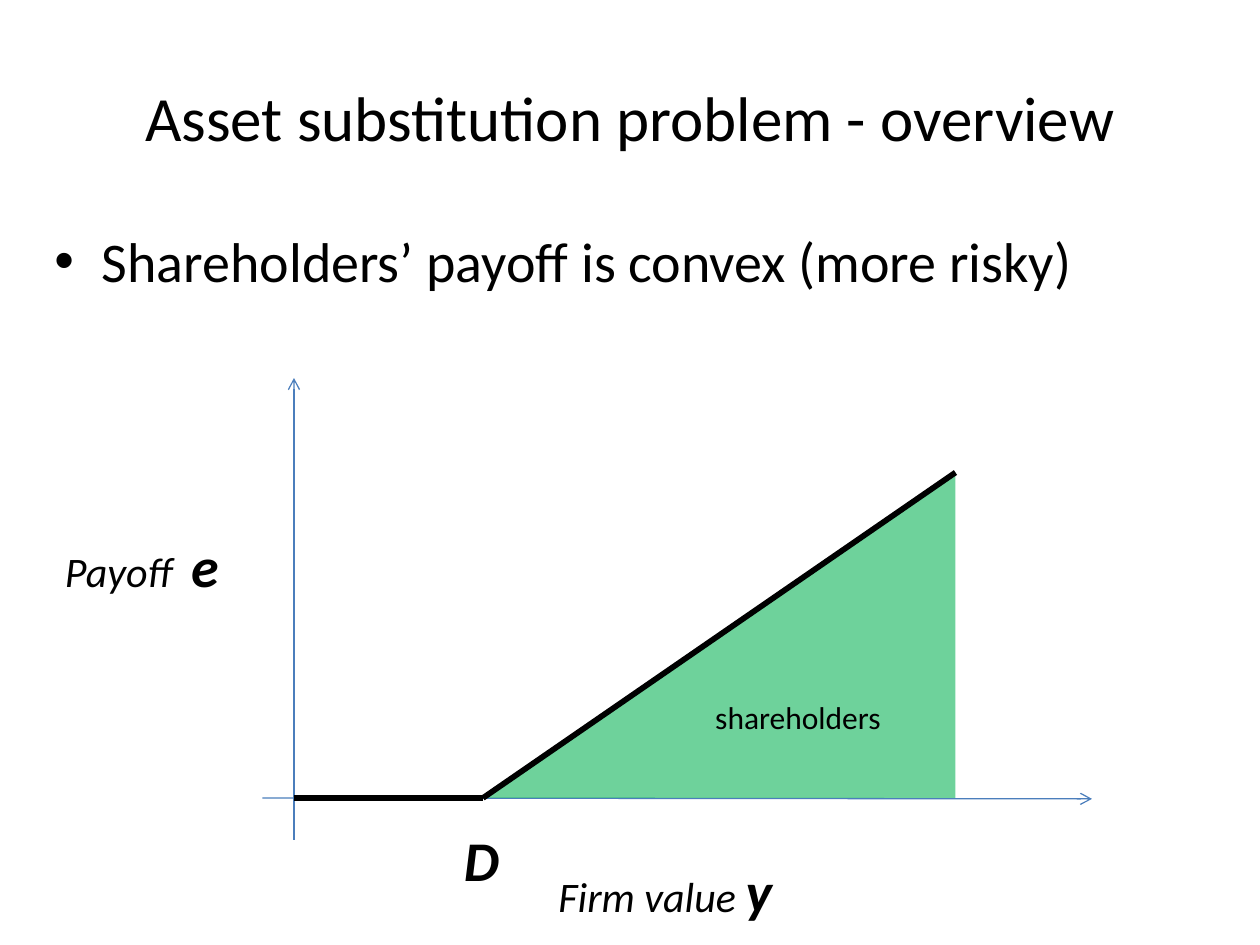
import pptx
import pptx.util
import pptx.dml.color
import pptx.enum.shapes
import pptx.enum.text
import pptx.oxml.ns
from lxml import etree

Pt = pptx.util.Pt
SHAPES = pptx.enum.shapes.MSO_SHAPE
ALIGN = pptx.enum.text.PP_ALIGN
ANCHOR = pptx.enum.text.MSO_ANCHOR
qn = pptx.oxml.ns.qn

FONT = "Calibri"
COLOURS = {"text": "000000", "axis": "4B7EBC", "payoff": "000000", "equity": "00B050"}


def rgb(name):
    return pptx.dml.color.RGBColor.from_string(COLOURS[name])


def write(frame, *spans, align=ALIGN.LEFT, anchor=ANCHOR.TOP, italic=False):
    """Fill a frame with one paragraph of (text, size, bold) spans."""
    frame.word_wrap = True
    frame.vertical_anchor = anchor
    para = frame.paragraphs[0]
    para.alignment = align
    for text, size, bold in spans:
        span = para.add_run()
        span.text = text
        span.font.name = FONT
        span.font.size = Pt(size)
        span.font.bold = bold
        span.font.italic = italic
        span.font.color.rgb = rgb("text")
    return para


def add_text(page, left, top, width, height, *spans, **style):
    box = page.shapes.add_textbox(Pt(left), Pt(top), Pt(width), Pt(height))
    return write(box.text_frame, *spans, **style)


def add_line(page, start, end, colour, weight, arrow=False):
    line = page.shapes.add_connector(
        pptx.enum.shapes.MSO_CONNECTOR.STRAIGHT, *map(Pt, start + end))
    line.line.color.rgb = rgb(colour)
    line.line.width = Pt(weight)
    if arrow:
        etree.SubElement(line.line._get_or_add_ln(), qn("a:tailEnd"), type="arrow")
    etree.SubElement(line._element.spPr, qn("a:effectLst"))


def add_title(page, left, top, width, height):
    add_text(page, left, top, width, height,
             ("Asset substitution problem - overview", 36, False),
             align=ALIGN.CENTER, anchor=ANCHOR.MIDDLE)


def add_bullet(page, left, top, width, height):
    para = add_text(page, left, top, width, height,
                    ("Shareholders’ payoff is convex (more risky)", 32, False))
    para.space_before = Pt(6.4)
    props = para._p.get_or_add_pPr()
    props.set("marL", str(Pt(27)))
    props.set("indent", str(-Pt(27)))
    etree.SubElement(props, qn("a:buFont"), typeface="Arial")
    etree.SubElement(props, qn("a:buChar"), char="•")


def add_equity_area(page, left, top, width, height):
    """Translucent triangle that rises to the right."""
    area = page.shapes.add_shape(
        SHAPES.RIGHT_TRIANGLE, Pt(left), Pt(top), Pt(width), Pt(height))
    area.shadow.inherit = False
    area._element.spPr.xfrm.set("flipH", "1")
    area.fill.solid()
    area.fill.fore_color.rgb = rgb("equity")
    colour = area._element.spPr.find(qn("a:solidFill"))[0]
    etree.SubElement(colour, qn("a:alpha"), val="57000")
    area.line.fill.background()
    write(area.text_frame, ("shareholders", 18, False),
          align=ALIGN.CENTER, anchor=ANCHOR.MIDDLE)


def add_payoff_diagram(page, left, top, width, height):
    origin_x, axis_y = left + 138, top + 240
    debt_x = origin_x + 108
    end_x, peak_y = debt_x + 270, axis_y - 186
    right, axis_bottom = left + width, top + height - 52

    add_line(page, (origin_x - 18, axis_y), (right, axis_y + 0.5), "axis", 0.75, arrow=True)
    add_line(page, (origin_x, axis_bottom), (origin_x, top), "axis", 0.75, arrow=True)
    add_text(page, left, top + 84, 114, 46,
             ("Payoff  ", 24, False), ("e", 32, True), italic=True)
    add_text(page, left + 282, top + 270, 156, 46,
             ("Firm value ", 24, False), ("y", 32, True), italic=True)
    add_equity_area(page, debt_x, peak_y, end_x - debt_x, axis_y - peak_y)
    add_line(page, (debt_x, axis_y), (end_x, peak_y), "payoff", 3.25)
    add_line(page, (origin_x, axis_y), (debt_x, axis_y), "payoff", 3.25)
    add_text(page, debt_x - 18, axis_y + 12, 30, 46, ("D", 32, True), italic=True)


def main():
    deck = pptx.Presentation()
    deck.slide_width, deck.slide_height = Pt(720), Pt(540)
    page = deck.slides.add_slide(deck.slide_layouts[6])
    add_title(page, 24, 21.6, 672, 90)
    add_bullet(page, 24, 126, 672, 66)
    add_payoff_diagram(page, 30, 216, 594, 316)
    deck.save("out.pptx")


if __name__ == "__main__":
    main()
